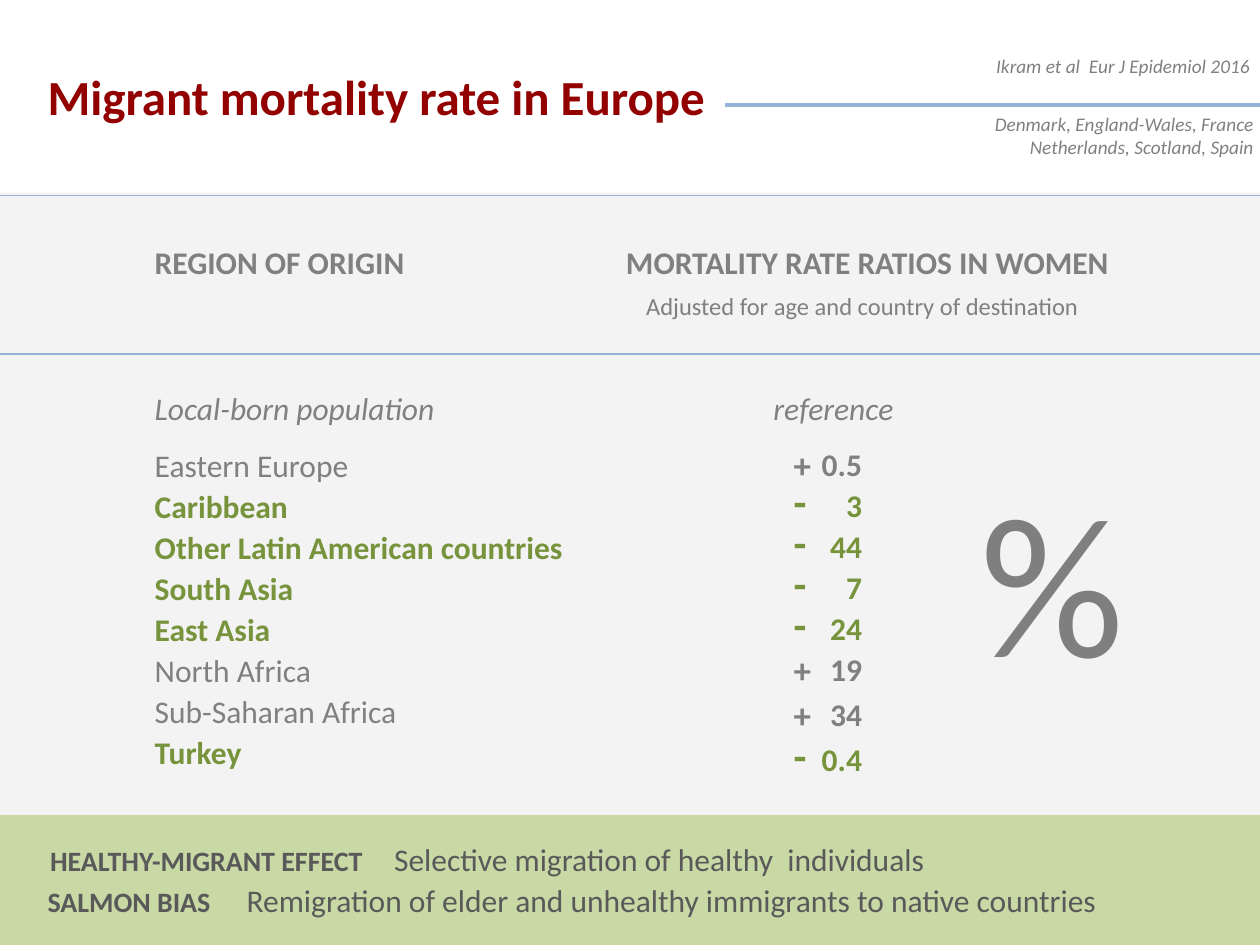
from dataclasses import dataclass

from lxml import etree
from pptx import Presentation, util as u
from pptx.dml.color import RGBColor
from pptx.enum import shapes, text
from pptx.oxml.ns import qn

GREY, GREEN, BLUE = "808080", "77933C", "95B3D7"
DARK, RED, PALE, MOSS = "595959", "920000", "F2F2F2", "C3D69B"
LEFT, RIGHT = text.PP_ALIGN.LEFT, text.PP_ALIGN.RIGHT


def colour(code):
    """Turn a hex string into a colour."""
    return RGBColor.from_string(code)


@dataclass
class Board:
    """Draws styled elements on a slide measured in 100 columns and 75 rows."""

    slide: object
    cell: int = u.Inches(0.1)
    face: str = "Calibri"

    def place(self, *cells):
        """Convert columns and rows to slide lengths."""
        return [round(c * self.cell) for c in cells]

    def band(self, x, y, w, h, fill, opacity=88):
        """Draw a translucent background band."""
        band = self.slide.shapes.add_shape(
            shapes.MSO_SHAPE.RECTANGLE, *self.place(x, y, w, h))
        band.shadow.inherit = False
        band.line.fill.background()
        band.fill.solid()
        band.fill.fore_color.rgb = colour(fill)
        tint = band.fill._xPr.find(qn("a:solidFill"))[0]
        etree.SubElement(tint, qn("a:alpha"), val=str(opacity * 1000))

    def rule(self, x1, x2, y, width=0.75):
        """Draw a horizontal rule."""
        rule = self.slide.shapes.add_connector(
            shapes.MSO_CONNECTOR.STRAIGHT, *self.place(x1, y, x2, y))
        rule.line.color.rgb = colour(BLUE)
        rule.line.width = u.Pt(width)
        etree.SubElement(rule._element.spPr, qn("a:effectLst"))

    def frame(self, x, y, w, h, wrap=True):
        """Add an empty text box and return its text frame."""
        box = self.slide.shapes.add_textbox(*self.place(x, y, w, h))
        box.text_frame.word_wrap = wrap
        return box.text_frame

    def style(self, font, size, ink, bold=False, italic=False):
        """Apply the house font."""
        font.name, font.size = self.face, u.Pt(size)
        font.bold, font.italic = bold, italic
        font.color.rgb = colour(ink)

    def label(self, x, y, w, h, words, size=18, ink=GREY, bold=False,
              italic=False, align=LEFT, wrap=True, middle=False):
        """Write one paragraph for each line of words."""
        frame = self.frame(x, y, w, h, wrap)
        if middle:
            frame.vertical_anchor = text.MSO_ANCHOR.MIDDLE
        for i, line in enumerate(words.split("\n")):
            para = frame.add_paragraph() if i else frame.paragraphs[0]
            para.text, para.alignment = line, align
            self.style(para.font, size, ink, bold, italic)

    def finding(self, x, y, term, meaning, stop):
        """Write a bold term and its meaning at a tab stop."""
        para = self.frame(x, y, 86, 4).paragraphs[0]
        tabs = etree.SubElement(para._p.get_or_add_pPr(), qn("a:tabLst"))
        etree.SubElement(tabs, qn("a:tab"), algn="l",
                         pos=str(self.place(stop)[0]))
        for words, size, bold in ((term + "\t", 16, True), (meaning, 18, False)):
            run = para.add_run()
            run.text = words
            self.style(run.font, size, DARK, bold)


def main():
    """Build the mortality slide."""
    deck = Presentation()
    deck.slide_width, deck.slide_height = u.Inches(10), u.Inches(7.5)
    board = Board(deck.slides.add_slide(deck.slide_layouts[6]))

    board.band(-3.9, 15.3, 104.7, 59.4, PALE)
    board.label(2.8, 2.1, 54.7, 11.1, "Migrant mortality rate in Europe",
                28, RED, bold=True, middle=True)
    board.label(56.3, 3.8, 43.9, 2.9, "Ikram et al  Eur J Epidemiol 2016",
                11, italic=True, align=RIGHT)
    board.label(71.6, 8.4, 28.9, 4.7,
                "Denmark, England-Wales, France\nNetherlands, Scotland, Spain",
                11, italic=True, align=RIGHT)
    board.rule(57.5, 130.3, 8.3, 2.25)

    board.label(11.3, 18.8, 22, 4, "REGION OF ORIGIN", bold=True, wrap=False)
    board.label(48.7, 18.8, 40.7, 4, "MORTALITY RATE RATIOS IN WOMEN",
                bold=True, wrap=False)
    board.label(50.3, 22.6, 36.7, 3.4,
                "Adjusted for age and country of destination", 14, wrap=False)
    board.label(11.3, 30.4, 24.7, 4, "Local-born population",
                italic=True, wrap=False)
    board.label(60.4, 30.4, 11.8, 4, "reference", italic=True, wrap=False)

    ratios = [("Eastern Europe", "+", "0.5", 0), ("Caribbean", "-", "3", 0),
              ("Other Latin American countries", "-", "44", 0),
              ("South Asia", "-", "7", 0), ("East Asia", "-", "24", 0),
              ("North Africa", "+", "19", 0),
              ("Sub-Saharan Africa", "+", "34", 0.3), ("Turkey", "-", "0.4", 0.6)]
    for i, (region, sign, ratio, drop) in enumerate(ratios):
        top = 34.9 + 3.26 * i
        lower = sign == "-"
        ink = GREEN if lower else GREY
        size, lift = (24, 0.9) if lower else (20, 0.2)
        board.label(11.3, top, 34.7, 4, region, ink=ink, bold=lower)
        board.label(62, top + drop - lift, 4.1, 4.4, sign, size, ink, bold=True)
        board.label(63.6, top + drop - 0.1, 5.8, 4, ratio, ink=ink,
                    bold=True, align=RIGHT)
    board.label(76.8, 35.7, 13.8, 20.4, "%", 115, "7F7F7F", wrap=False)

    board.band(-2.3, 64.7, 108.2, 12.6, MOSS)
    board.finding(3, 66.2, "HEALTHY-MIGRANT EFFECT",
                  "Selective migration of healthy  individuals", 27.3)
    board.finding(2.8, 69.4, "SALMON BIAS",
                  "Remigration of elder and unhealthy immigrants to native countries",
                  15.8)
    board.rule(-5.9, 115.4, 15.5)
    board.rule(-9.8, 112.2, 28.1)
    deck.save("out.pptx")


if __name__ == "__main__":
    main()
